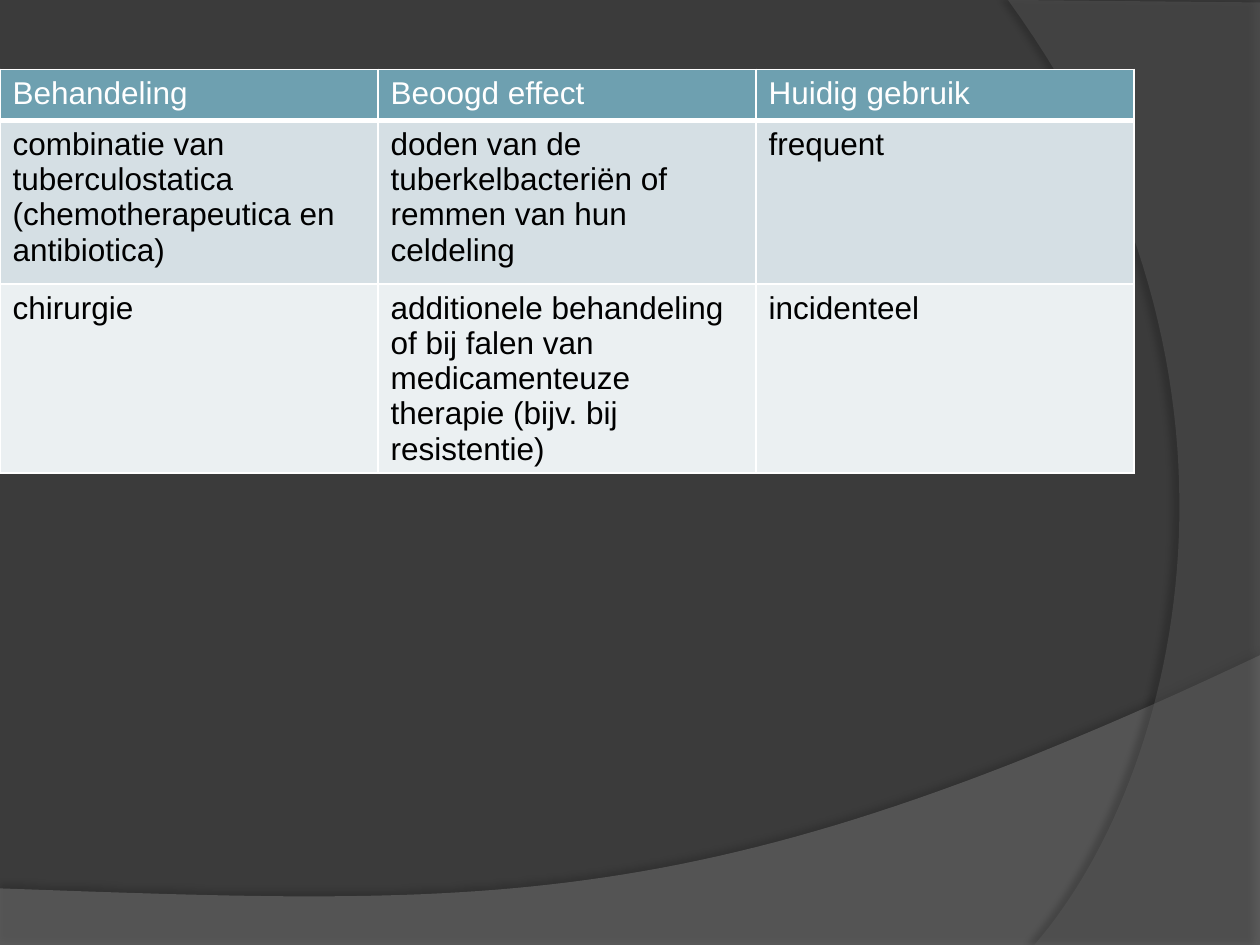
from lxml.etree import SubElement
from pptx import Presentation
from pptx.dml.color import RGBColor
from pptx.oxml.ns import qn
from pptx.util import Cm, Pt

ROWS = [
    ("Behandeling", "Beoogd effect", "Huidig gebruik"),
    ("combinatie van tuberculostatica (chemotherapeutica en antibiotica)",
     "doden van de tuberkelbacteriën of remmen van hun celdeling",
     "frequent"),
    ("chirurgie",
     "additionele behandeling of bij falen van medicamenteuze therapie "
     "(bijv. bij resistentie)",
     "incidenteel"),
]
# fill, text colour, height in cm, width of the line below in pt
ROW_STYLES = [
    ("6EA0B0", "FFFFFF", 1.03, 3),
    ("D5DFE4", "000000", 3.3, 1),
    ("EBF0F2", "000000", 3.81, 1),
]


def rgb(value):
    return RGBColor.from_string(value)


def bezier(p0, p1, p2, p3, steps=60):
    """Return points along a cubic curve, without its start."""
    points = []
    for i in range(1, steps + 1):
        t = i / steps
        weights = ((1 - t) ** 3, 3 * t * (1 - t) ** 2, 3 * t * t * (1 - t), t ** 3)
        points.append(tuple(sum(w * p[axis] for w, p in zip(weights, (p0, p1, p2, p3)))
                            for axis in (0, 1)))
    return points


def add_alpha(color, percent):
    SubElement(color, qn("a:alpha"), val=str(percent * 1000))


def add_shadow(sp, opacity, distance, direction):
    effects = SubElement(sp._element.spPr, qn("a:effectLst"))
    shadow = SubElement(effects, qn("a:outerShdw"), blurRad=str(Pt(4)),
                        dist=str(Pt(distance)), dir=str(direction * 60000),
                        algn="ctr", rotWithShape="0")
    add_alpha(SubElement(shadow, qn("a:srgbClr"), val="000000"), opacity)


def add_panel(slide, left, top, points, color, opacity):
    """Draw a translucent outline; points are in cm from left and top."""
    outline = [(Cm(left + x), Cm(top + y)) for x, y in points]
    builder = slide.shapes.build_freeform(*outline[0])
    builder.add_line_segments(outline[1:], close=True)
    sp = builder.convert_to_shape()
    sp.fill.solid()
    sp.fill.fore_color.rgb = rgb(color)
    add_alpha(sp._element.spPr.find(".//" + qn("a:srgbClr")), opacity)
    sp.line.fill.background()
    return sp


def add_background(slide):
    slide.background.fill.solid()
    slide.background.fill.fore_color.rgb = rgb("3B3B3B")

    sweep = [(0, 4.7), (0, 5.87), (25.4, 5.87), (25.4, 0)]
    sweep += bezier(sweep[-1], (14.2, 5.31), (9.93, 5.05), sweep[0])
    sp = add_panel(slide, 0, 13.21, sweep, "7F7F7F", 45)
    add_shadow(sp, 35, 3.5, 270)

    arc = [(5.08, 0.05), (5.08, 19.05), (0.53, 19.05)]
    arc += bezier(arc[-1], (3.43, 15.72), (5.54, 7.62), (0, 0))
    sp = add_panel(slide, 20.32, 0, arc, "5E5E5E", 40)
    add_shadow(sp, 45, 4, 180)


def add_border(cell, side, width):
    ln = SubElement(cell._tc.get_or_add_tcPr(), qn("a:" + side), w=str(Pt(width)))
    SubElement(SubElement(ln, qn("a:solidFill")), qn("a:srgbClr"), val="FFFFFF")


def add_treatment_table(slide, left, top, width):
    height = sum(style[2] for style in ROW_STYLES)
    table = slide.shapes.add_table(len(ROWS), len(ROWS[0]), Cm(left), Cm(top),
                                   Cm(width), Cm(height)).table
    for r, (texts, style) in enumerate(zip(ROWS, ROW_STYLES)):
        fill, color, row_height, line_below = style
        table.rows[r].height = Cm(row_height)
        for c, text in enumerate(texts):
            cell = table.cell(r, c)
            add_border(cell, "lnL", 1)
            add_border(cell, "lnR", 1)
            add_border(cell, "lnT", ROW_STYLES[r - 1][3] if r else 1)
            add_border(cell, "lnB", line_below)
            cell.fill.solid()
            cell.fill.fore_color.rgb = rgb(fill)
            cell.text = text
            font = cell.text_frame.paragraphs[0].runs[0].font
            font.name, font.size, font.bold = "Arial", Pt(18), False
            font.color.rgb = rgb(color)


def main():
    prs = Presentation()
    prs.slide_width, prs.slide_height = Cm(25.4), Cm(19.05)
    slide = prs.slides.add_slide(prs.slide_layouts[6])
    add_background(slide)
    add_treatment_table(slide, 0, 1.4, 22.86)
    prs.save("out.pptx")


if __name__ == "__main__":
    main()
